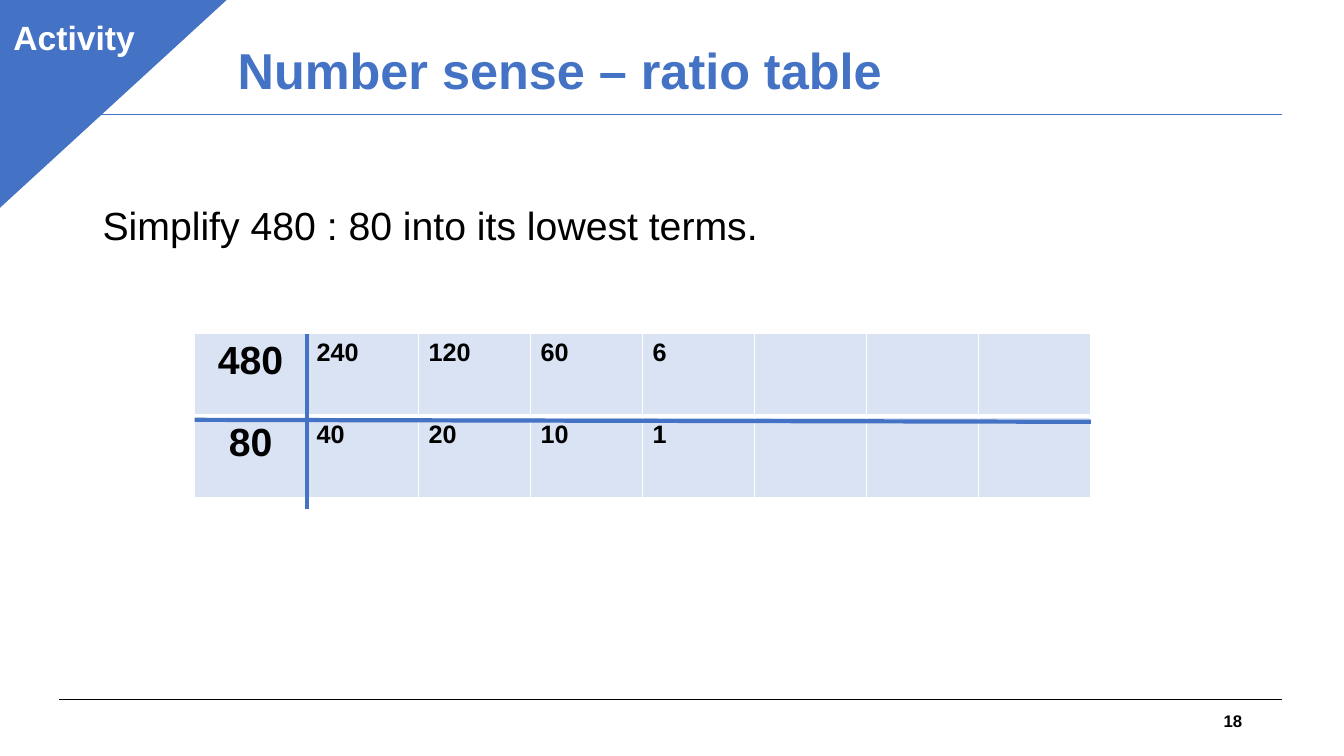
from lxml import etree
from pptx import Presentation
from pptx.dml.color import RGBColor
from pptx.enum.shapes import MSO_CONNECTOR, MSO_SHAPE
from pptx.enum.text import MSO_ANCHOR, PP_ALIGN
from pptx.oxml.ns import qn
from pptx.util import Inches, Pt

LEFT, MID, RIGHT = PP_ALIGN.LEFT, PP_ALIGN.CENTER, PP_ALIGN.RIGHT
TOP, CENTER = MSO_ANCHOR.TOP, MSO_ANCHOR.MIDDLE
STRAIGHT = MSO_CONNECTOR.STRAIGHT
RECT, TRIANGLE = MSO_SHAPE.RECTANGLE, MSO_SHAPE.ISOSCELES_TRIANGLE
WIDE, HIGH = 13.33, 7.5
BLUE, PALE, BLACK, WHITE = "4472C4", "DAE3F3", "000000", "FFFFFF"
RATIOS = [["480", "240", "120", "60", "6", "", "", ""],
          ["80", "40", "20", "10", "1", "", "", ""]]


def color(code):
    """Turn a hex string into a colour."""
    return RGBColor.from_string(code)


def write(frame, text, size, code, bold=True, align=LEFT, anchor=TOP, gap=1.0):
    """Set one formatted paragraph in a text frame."""
    frame.text = text
    frame.word_wrap = True
    frame.vertical_anchor = anchor
    para = frame.paragraphs[0]
    para.alignment = align
    para.line_spacing = gap
    for run in para.runs:
        font = run.font
        font.name, font.size, font.bold = "Arial", Pt(size), bold
        font.color.rgb = color(code)


def label(slide, box, text, size, code, **style):
    """Add a text box."""
    shape = slide.shapes.add_textbox(*map(Inches, box))
    write(shape.text_frame, text, size, code, **style)


def rule(slide, start, end, code, width):
    """Draw a straight line between two points."""
    line = slide.shapes.add_connector(STRAIGHT, *map(Inches, start + end))
    line.line.color.rgb = color(code)
    line.line.width = Pt(width)
    etree.SubElement(line.element.spPr, qn("a:effectLst"))


def block(slide, kind, box, width):
    """Add a solid blue shape."""
    shape = slide.shapes.add_shape(kind, *map(Inches, box))
    shape.shadow.inherit = False
    shape.fill.solid()
    shape.fill.fore_color.rgb = color(BLUE)
    shape.line.color.rgb = color(BLUE)
    shape.line.width = Pt(width)
    return shape


def border(cell, widths):
    """Give a cell white edges, one width per side."""
    props = cell._tc.get_or_add_tcPr()
    for side, width in widths.items():
        edge = etree.SubElement(props, qn(f"a:ln{side}"), w=str(Pt(width)))
        fill = etree.SubElement(edge, qn("a:solidFill"))
        etree.SubElement(fill, qn("a:srgbClr"), val=WHITE)


def header(slide, box):
    """Place the title and the line beneath it."""
    left, top, width, height = box
    label(slide, box, "Number sense – ratio table", 36, BLUE,
          anchor=CENTER, gap=0.9)
    level = top + height - 0.31
    rule(slide, (0.59, level), (12.72, level), BLUE, 0.75)


def corner(slide, box):
    """Place the corner triangle with its tag."""
    left, top, width, height = box
    wedge = block(slide, TRIANGLE, box, 1)
    wedge.adjustments[0] = 0
    wedge.element.spPr.xfrm.set("flipV", "1")
    tag = block(slide, RECT, (left + 0.04, top + 0.14, 1.45, 0.5), 0.75)
    write(tag.text_frame, "Activity", 24, WHITE, align=MID)


def ratios(slide, box):
    """Place the ratio table and its two dividers."""
    left, top, width, height = box
    rows, cols = len(RATIOS), len(RATIOS[0])
    frame = slide.shapes.add_table(rows, cols, *map(Inches, box))
    table = frame.table
    table.first_row = table.horz_banding = False
    for row, values in enumerate(RATIOS):
        for col, value in enumerate(values):
            cell = table.cell(row, col)
            below = 3 if row == 0 else 1
            above = 1 if row == 0 else 3
            border(cell, {"L": 1, "R": 1, "T": above, "B": below})
            cell.fill.solid()
            cell.fill.fore_color.rgb = color(PALE)
            size, align = (28, MID) if col == 0 else (18, LEFT)
            write(cell.text_frame, value, size, BLACK, align=align)
    middle, split = top + height / rows, left + width / cols
    rule(slide, (left, middle + 0.04), (left + width, middle + 0.06), BLUE, 3)
    rule(slide, (split, top), (split, top + height + 0.11), BLUE, 3)


def footer(slide, box):
    """Place the bottom line and the slide number."""
    left, top, width, height = box
    rule(slide, (left, top), (left + width, top), BLACK, 0.75)
    label(slide, (left + width - 3.3, top + 0.01, 3, height), "18", 12, BLACK,
          align=RIGHT, anchor=CENTER)


def main():
    """Build and save the slide."""
    deck = Presentation()
    deck.slide_width, deck.slide_height = Inches(WIDE), Inches(HIGH)
    slide = deck.slides.add_slide(deck.slide_layouts[6])
    footer(slide, (0.59, 6.94, 12.13, 0.4))
    header(slide, (2.26, 0, 11.5, 1.45))
    label(slide, (0.92, 2, 11.5, 4.76),
          "Simplify 480 : 80 into its lowest terms.", 28, BLACK,
          bold=False, gap=0.9)
    corner(slide, (-0.03, -0.02, 2.29, 2.1))
    ratios(slide, (1.93, 3.31, 8.89, 1.63))
    deck.save("out.pptx")


if __name__ == "__main__":
    main()
